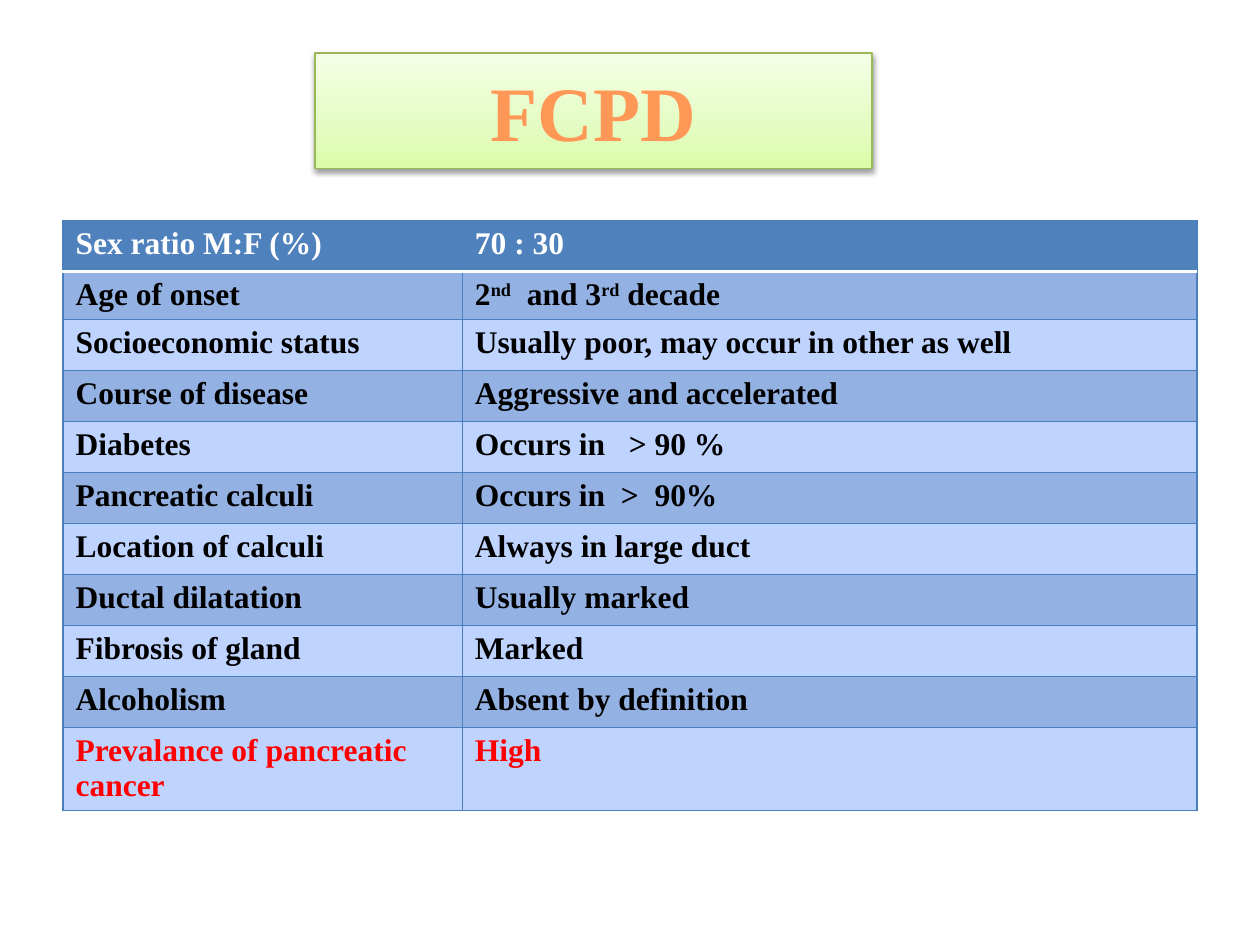
from lxml import etree
from pptx import Presentation
from pptx.dml.color import RGBColor
from pptx.enum import shapes, text
from pptx.oxml import parse_xml
from pptx.oxml.ns import nsdecls
from pptx.util import Inches, Pt

FONT = "Times New Roman"
TITLE = "FCPD"
TITLE_STOPS = [(0, "DAFDA7"), (35, "E4FCC2"), (100, "F5FFE7")]
HEADER, DARK_BAND, LIGHT_BAND = "4F81BD", "93B1E3", "BFD3FF"
GRID, WHITE, BLACK, RED = "4B7EBC", "FFFFFF", "000000", "FF0000"

# A list in place of a string alternates normal and superscript runs.
FEATURES = [
    ("Sex ratio M:F (%)", "70 : 30"),
    ("Age of onset", ["2", "nd", "  and 3", "rd", " decade"]),
    ("Socioeconomic status", "Usually poor, may occur in other as well"),
    ("Course of disease", "Aggressive and accelerated"),
    ("Diabetes", "Occurs in   > 90 %"),
    ("Pancreatic calculi", "Occurs in  >  90%"),
    ("Location of calculi", "Always in large duct"),
    ("Ductal dilatation", "Usually marked"),
    ("Fibrosis of gland", "Marked"),
    ("Alcoholism", "Absent by definition"),
    ("Prevalance of pancreatic cancer", "High"),
]
COLUMN_WIDTHS = [3.17, 5.83]
ROW_HEIGHT = 0.405
SPECIAL_HEIGHTS = {1: 0.38, len(FEATURES) - 1: 0.66}


def rgb(value):
    return RGBColor.from_string(value)


def add_run(paragraph, content, size, color, superscript=False):
    run = paragraph.add_run()
    run.text = content
    for name, value in {"name": FONT, "size": Pt(size), "bold": True}.items():
        setattr(run.font, name, value)
    run.font.color.rgb = rgb(color)
    if superscript:
        run.font._element.set("baseline", "30000")


def add_title(slide):
    box = slide.shapes.add_shape(shapes.MSO_SHAPE.RECTANGLE, Inches(2.5),
                                 Inches(0.42), Inches(4.42), Inches(0.92))
    box.line.color.rgb = rgb("98B955")
    box.line.width = Pt(0.75)
    stops = "".join(f'<a:gs pos="{position * 1000}"><a:srgbClr val="{color}"/></a:gs>'
                    for position, color in TITLE_STOPS)
    gradient = parse_xml(f'<a:gradFill {nsdecls("a")} rotWithShape="1"><a:gsLst>{stops}'
                         '</a:gsLst><a:lin ang="16200000" scaled="1"/></a:gradFill>')
    box._element.spPr.find("{*}prstGeom").addnext(gradient)
    box._element.spPr.append(parse_xml(
        f'<a:effectLst {nsdecls("a")}><a:outerShdw blurRad="40000" dist="20000" '
        'dir="5400000" rotWithShape="0"><a:srgbClr val="000000">'
        '<a:alpha val="38000"/></a:srgbClr></a:outerShdw></a:effectLst>'))
    box.text_frame.vertical_anchor = text.MSO_ANCHOR.MIDDLE
    paragraph = box.text_frame.paragraphs[0]
    paragraph.alignment = text.PP_ALIGN.CENTER
    add_run(paragraph, TITLE, 44, "FF9856")


def set_borders(cell, borders):
    """Draw each (side, color, points) edge; sides go in the order L, R, T, B."""
    properties = cell._tc.get_or_add_tcPr()
    for side, color, points in borders:
        properties.append(parse_xml(
            f'<a:ln{side} {nsdecls("a")} w="{Pt(points)}"><a:solidFill>'
            f'<a:srgbClr val="{color}"/></a:solidFill></a:ln{side}>'))


def fill_cell(cell, content, row, last_row):
    header_edge = (WHITE, 2)
    grid_edge = (GRID, 0.75)
    set_borders(cell, [("L", *grid_edge), ("R", *grid_edge),
                       ("T", *(header_edge if row == 1 else grid_edge)),
                       ("B", *(header_edge if row == 0 else grid_edge))])
    band = HEADER if row == 0 else DARK_BAND if row % 2 else LIGHT_BAND
    cell.fill.solid()
    cell.fill.fore_color.rgb = rgb(band)
    color = WHITE if row == 0 else RED if row == last_row else BLACK
    pieces = [content] if isinstance(content, str) else content
    for index, piece in enumerate(pieces):
        add_run(cell.text_frame.paragraphs[0], piece, 18, color, index % 2 == 1)


def add_feature_table(slide):
    heights = [SPECIAL_HEIGHTS.get(row, ROW_HEIGHT) for row in range(len(FEATURES))]
    table = slide.shapes.add_table(
        len(FEATURES), len(COLUMN_WIDTHS), Inches(0.5), Inches(1.75),
        Inches(sum(COLUMN_WIDTHS)), Inches(sum(heights))).table
    for column, width in zip(table.columns, COLUMN_WIDTHS):
        column.width = Inches(width)
    for row, (height, contents) in enumerate(zip(heights, FEATURES)):
        table.rows[row].height = Inches(height)
        for column, content in enumerate(contents):
            fill_cell(table.cell(row, column), content, row, len(FEATURES) - 1)


def main():
    presentation = Presentation()
    presentation.slide_width, presentation.slide_height = Inches(10), Inches(7.5)
    slide = presentation.slides.add_slide(presentation.slide_layouts[6])
    add_title(slide)
    add_feature_table(slide)
    presentation.save("out.pptx")


if __name__ == "__main__":
    main()
